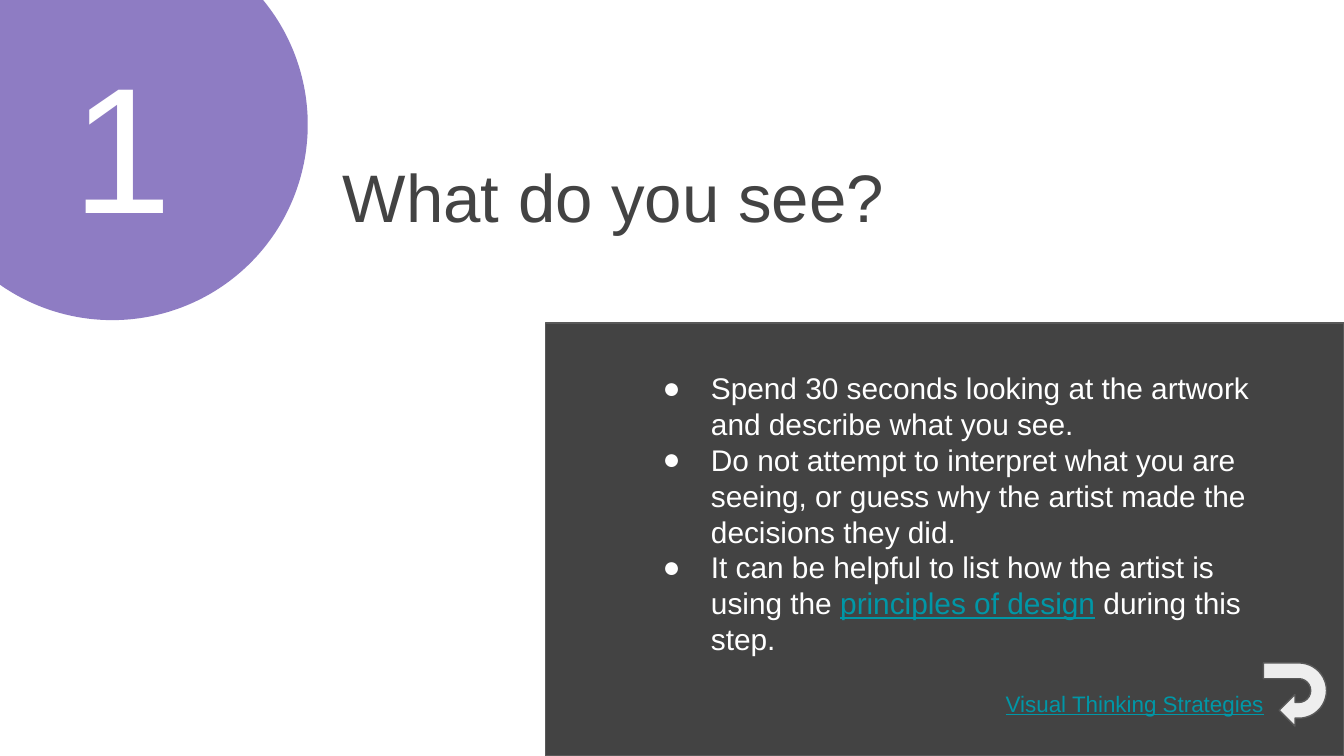
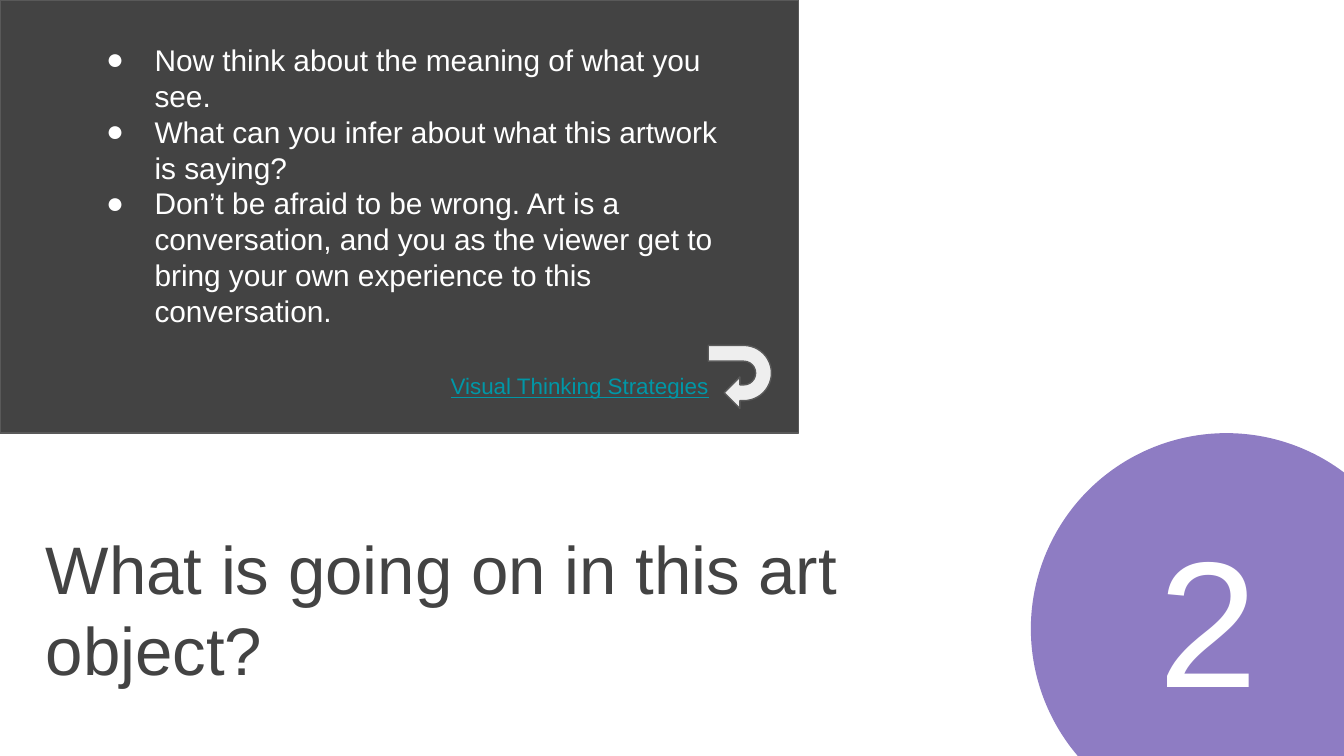
"""Build two numbered discussion slides about looking at an artwork."""
import pptx
import pptx.util
import pptx.dml.color
import pptx.enum.shapes
import pptx.enum.text
import pptx.oxml
import pptx.oxml.ns

PURPLE, DARK, EDGE = "8E7CC3", "434343", "595959"
WHITE, PALE, TEAL = "FFFFFF", "EEEEEE", "0097A7"
SHAPE = pptx.enum.shapes.MSO_SHAPE

prs = pptx.Presentation()
prs.slide_width = pptx.util.Inches(10)
prs.slide_height = prs.slide_width * 9 // 16


def rgb(colour):
    return pptx.dml.color.RGBColor.from_string(colour)


def style(sp, box, fill=None, line=None, runs=(), size=None):
    """Place sp by percent of the slide, paint it and write paragraphs of (text, colour) runs."""
    sides = (prs.slide_width, prs.slide_height) * 2
    for name, share, side in zip(("left", "top", "width", "height"), box, sides):
        setattr(sp, name, round(share * side / 100))
    if fill:
        sp.shadow.inherit = False
        sp.fill.solid()
        sp.fill.fore_color.rgb = rgb(fill)
        sp.line.fill.background()
    if line:
        sp.line.color.rgb = rgb(line)
        sp.line.width = pptx.util.Pt(0.75)
    if not runs:
        return
    tf = sp.text_frame
    frame = {"word_wrap": True, "auto_size": pptx.enum.text.MSO_AUTO_SIZE.NONE,
             "vertical_anchor": pptx.enum.text.MSO_ANCHOR.TOP}
    margins = ("margin_left", "margin_top", "margin_right", "margin_bottom")
    frame.update(dict.fromkeys(margins, pptx.util.Inches(0.1)))
    for name, value in frame.items():
        setattr(tf, name, value)
    for i, parts in enumerate(runs):
        p = tf.add_paragraph() if i else tf.paragraphs[0]
        p.alignment = pptx.enum.text.PP_ALIGN.LEFT
        p.space_before = pptx.util.Pt(0)
        for text, colour in parts:
            r = p.add_run()
            r.text = text
            font = {"name": "Arial", "size": pptx.util.Pt(size), "underline": colour == TEAL}
            for name, value in font.items():
                setattr(r.font, name, value)
            r.font.color.rgb = rgb(colour)


slides = [
    {"number": "1", "title": "What do you see?",
     "circle": (-6.2, -9.4), "panel": (40.6, 42.7), "list": (46.9, 47.15),
     "heading": (24.5, 18.7, 43.7), "digit": (4.4, 2.7), "arrow": (94, 87.7),
     "points": [
         [("Spend 30 seconds looking at the artwork and describe what you see.", WHITE)],
         [("Do not attempt to interpret what you are seeing, or guess why the artist "
           "made the decisions they did.", WHITE)],
         [("It can be helpful to list how the artist is using the ", WHITE),
          ("principles of design", TEAL), (" during this step.", WHITE)]]},
    {"number": "2", "title": "What is going on in this art object?",
     "circle": (76.7, 57.3), "panel": (0, 0), "list": (5.5, 3.75),
     "heading": (2.4, 68, 71.8), "digit": (85.2, 65.5), "arrow": (52.7, 45.7),
     "points": [
         [("Now think about the meaning of what you see.", WHITE)],
         [("What can you infer about what this artwork is saying?", WHITE)],
         [("Don’t be afraid to be wrong. Art is a conversation, and you as the viewer "
           "get to bring your own experience to this conversation.", WHITE)]]},
]

for d in slides:
    s = prs.slides.add_slide(prs.slide_layouts[1])
    title, body = s.shapes.title, s.placeholders[1]

    circle = s.shapes.add_shape(SHAPE.OVAL, 0, 0, 0, 0)
    style(circle, (*d["circle"], 29.1, 51.75), PURPLE)
    panel = s.shapes.add_shape(SHAPE.RECTANGLE, 0, 0, 0, 0)
    style(panel, (*d["panel"], 59.4, 57.3), DARK, EDGE)

    style(body, (*d["list"], 49.3, 41.25), runs=d["points"], size=16)
    for p in body.text_frame.paragraphs:
        pPr = p._p.get_or_add_pPr()
        pPr.set("marL", str(pptx.util.Inches(0.5)))
        pPr.set("indent", str(pptx.util.Inches(-0.36)))
        ns = pptx.oxml.ns.nsdecls("a")
        for xml in (f'<a:buClr {ns}><a:srgbClr val="{WHITE}"/></a:buClr>',
                    f'<a:buFont {ns} typeface="Arial"/>', f'<a:buChar {ns} char="●"/>'):
            pPr.append(pptx.oxml.parse_xml(xml))
    style(title, (*d["heading"], 15.5), runs=[[(d["title"], DARK)]], size=36)
    for sp in (body, title):
        s.shapes.element.append(sp.element)

    digit = s.shapes.add_textbox(0, 0, 0, 0)
    style(digit, (*d["digit"], 21.4, 41.25), runs=[[(d["number"], WHITE)]], size=96)

    x, y = d["arrow"]
    arrow = s.shapes.add_shape(SHAPE.U_TURN_ARROW, 0, 0, 0, 0)
    style(arrow, (x, y, 4.7, 8.35), PALE, EDGE)
    arrow.rotation = 90
    for i, value in enumerate((0.25, 0.25, 0.25, 0.44, 0.75)):
        arrow.adjustments[i] = value
    label = s.shapes.add_textbox(0, 0, 0, 0)
    style(label, (x - 20.15, y + 1.8, 24, 6.75),
          runs=[[("Visual Thinking Strategies", TEAL)]], size=12)
    s.shapes.add_group_shape([arrow, label])

prs.save("out.pptx")
